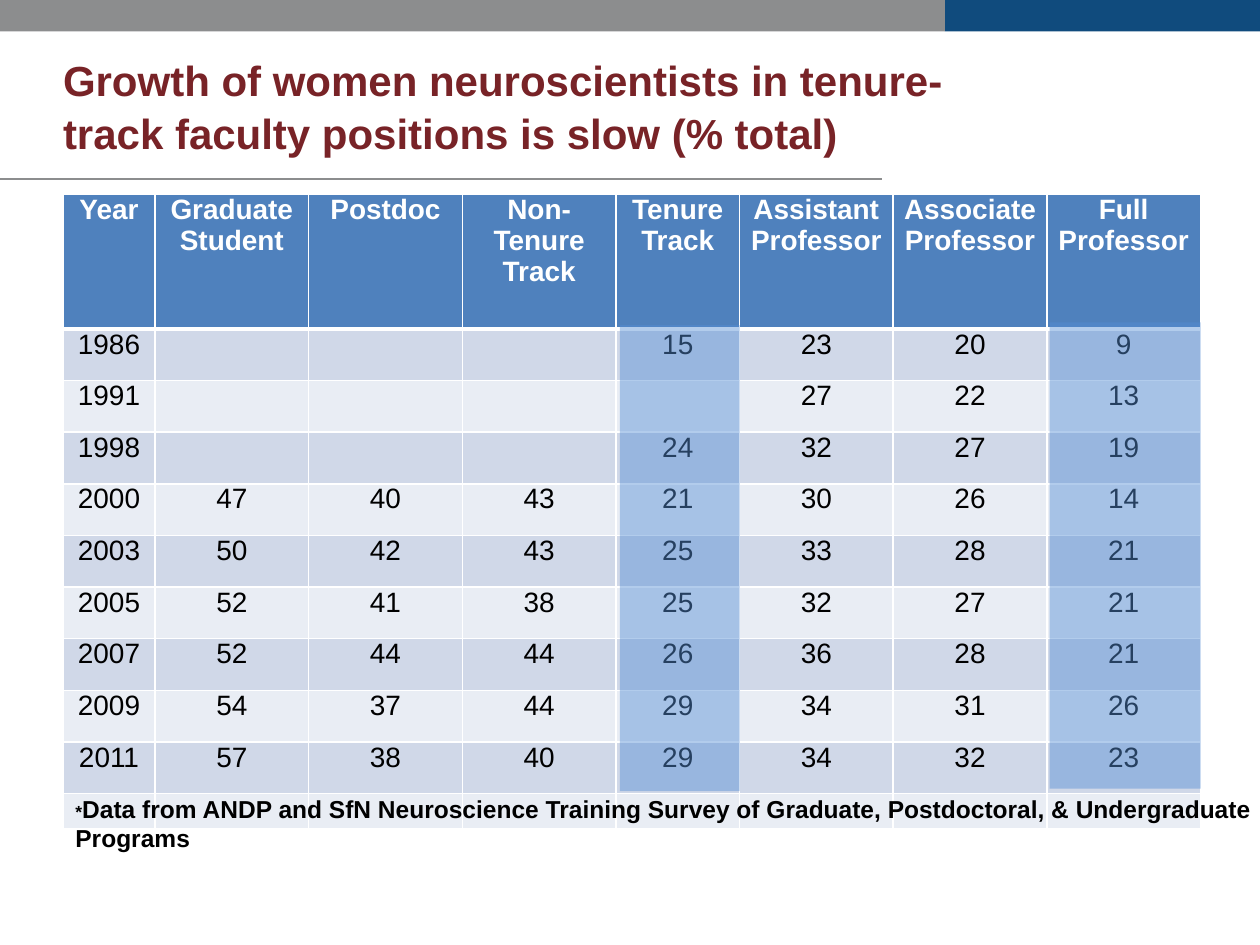
import pptx
import pptx.util
import pptx.dml.color
import pptx.enum.shapes
import pptx.enum.text
import pptx.oxml
import pptx.oxml.ns
from lxml import etree

Inches, Pt = pptx.util.Inches, pptx.util.Pt
qn = pptx.oxml.ns.qn

# Content
TITLE = "Growth of women neuroscientists in tenure-track faculty positions is slow (% total)"
HEADER = ["Year", "Graduate Student", "Postdoc", "Non-\nTenure\nTrack", "Tenure\nTrack",
          "Assistant Professor", "Associate Professor", "Full Professor"]
ROWS = [
    [1986, "", "", "", 15, 23, 20, 9],
    [1991, "", "", "", "", 27, 22, 13],
    [1998, "", "", "", 24, 32, 27, 19],
    [2000, 47, 40, 43, 21, 30, 26, 14],
    [2003, 50, 42, 43, 25, 33, 28, 21],
    [2005, 52, 41, 38, 25, 32, 27, 21],
    [2007, 52, 44, 44, 26, 36, 28, 21],
    [2009, 54, 37, 44, 29, 34, 31, 26],
    [2011, 57, 38, 40, 29, 34, 32, 23],
    [""] * len(HEADER),
]
FOOTNOTE = ("Data from ANDP and SfN Neuroscience Training Survey of Graduate, "
            "Postdoctoral, & Undergraduate Programs")

# Layout and theme
COL_WIDTHS = [0.73, 1.22, 1.22, 1.22, 0.98, 1.22, 1.22, 1.22]
ROW_HEIGHTS = [1.07] + [0.41] * 9 + [0.28]
HIGHLIGHTS = [(4.92, 2.58, 0.95, 3.7), (8.33, 2.56, 1.2, 3.7)]
THEME = dict(font="Arial", title="782327", gray="8C8D8E", navy="104B7D", header="4F81BD",
             bands=("D0D8E8", "E9EDF4"), highlight="558ED5", white="FFFFFF", black="000000",
             title_size=24, table_size=16, note_size=14, star_size=10)


def rgb(value):
    return pptx.dml.color.RGBColor.from_string(value)


def add_text(p, text, size, color=THEME["black"], bold=False):
    r = p.add_run()
    r.text = text
    r.font.name, r.font.size, r.font.bold = THEME["font"], Pt(size), bold
    r.font.color.rgb = rgb(color)


def set_margins(frame, left, top, right, bottom):
    frame.margin_left, frame.margin_top = Inches(left), Inches(top)
    frame.margin_right, frame.margin_bottom = Inches(right), Inches(bottom)


def add_rect(s, box, color, opacity=None):
    sp = s.shapes.add_shape(pptx.enum.shapes.MSO_SHAPE.RECTANGLE, *map(Inches, box))
    sp.shadow.inherit = False
    sp.fill.solid()
    sp.fill.fore_color.rgb = rgb(color)
    sp.line.fill.background()
    if opacity is not None:
        clr = sp.fill._xPr.find(qn("a:solidFill"))[0]
        etree.SubElement(clr, qn("a:alpha"), val=str(opacity * 1000))


def set_borders(cell, **widths):
    tc_pr = cell._tc.get_or_add_tcPr()
    for i, side in enumerate("LRTB"):
        ln = etree.Element(qn(f"a:ln{side}"), w=str(Pt(widths.get(side, 1))))
        fill = etree.SubElement(ln, qn("a:solidFill"))
        etree.SubElement(fill, qn("a:srgbClr"), val=THEME["white"])
        tc_pr.insert(i, ln)


def fill_cell(cell, text, fill, color, bold):
    set_margins(cell, 0.07, 0, 0.07, 0)
    cell.fill.solid()
    cell.fill.fore_color.rgb = rgb(fill)
    tf = cell.text_frame
    for i, line in enumerate(text.split("\n")):
        p = tf.add_paragraph() if i else tf.paragraphs[0]
        p.alignment = pptx.enum.text.PP_ALIGN.CENTER
        if line:
            add_text(p, line, THEME["table_size"], color, bold)
        else:
            etree.SubElement(p._p, qn("a:endParaRPr"), sz=str(THEME["table_size"] * 100))


def add_data_table(s):
    frame = s.shapes.add_table(len(ROW_HEIGHTS), len(COL_WIDTHS), Inches(0.5), Inches(1.54),
                               Inches(sum(COL_WIDTHS)), Inches(sum(ROW_HEIGHTS)))
    table = frame.table
    for column, width in zip(table.columns, COL_WIDTHS):
        column.width = Inches(width)
    for row, height in zip(table.rows, ROW_HEIGHTS):
        row.height = Inches(height)
    for i, values in enumerate([HEADER] + ROWS):
        head = i == 0
        fill = THEME["header"] if head else THEME["bands"][(i - 1) % 2]
        color = THEME["white"] if head else THEME["black"]
        for j, value in enumerate(values):
            cell = table.cell(i, j)
            fill_cell(cell, str(value), fill, color, head)
            set_borders(cell, T=3 if i == 1 else 1, B=3 if head else 1)


def main():
    prs = pptx.Presentation()
    prs.slide_width, prs.slide_height = Inches(10), Inches(7.5)
    s = prs.slides.add_slide(prs.slide_layouts[5])

    # Top bars and title rule
    rule = s.shapes.add_connector(pptx.enum.shapes.MSO_CONNECTOR.STRAIGHT,
                                  Inches(0), Inches(1.42), Inches(7), Inches(1.42))
    rule.line.color.rgb, rule.line.width = rgb(THEME["gray"]), Pt(0.75)
    etree.SubElement(rule._element.spPr, qn("a:effectLst"))
    add_rect(s, (7.5, 0, 2.5, 0.25), THEME["navy"])
    add_rect(s, (0, 0, 7.5, 0.25), THEME["gray"])

    # Title
    title = s.shapes.title
    title.left, title.top, title.width, title.height = map(Inches, (0.5, 0.42, 7, 0.92))
    tf = title.text_frame
    set_margins(tf, 0, 0, 0, 0)
    tf.word_wrap = True
    tf.auto_size = pptx.enum.text.MSO_AUTO_SIZE.NONE
    tf.vertical_anchor = pptx.enum.text.MSO_ANCHOR.TOP
    p = tf.paragraphs[0]
    p.alignment = pptx.enum.text.PP_ALIGN.LEFT
    p.line_spacing = 1.04
    add_text(p, TITLE, THEME["title_size"], THEME["title"], bold=True)

    add_data_table(s)

    # Footnote
    tf = s.shapes.add_textbox(*map(Inches, (0.5, 6.25, 9.69, 0.57))).text_frame
    tf.word_wrap = True
    tf.auto_size = pptx.enum.text.MSO_AUTO_SIZE.SHAPE_TO_FIT_TEXT
    add_text(tf.paragraphs[0], "*", THEME["star_size"], bold=True)
    add_text(tf.paragraphs[0], FOOTNOTE, THEME["note_size"], bold=True)

    # Column highlights
    for box in HIGHLIGHTS:
        add_rect(s, box, THEME["highlight"], opacity=45)

    prs.save("out.pptx")


if __name__ == "__main__":
    main()
